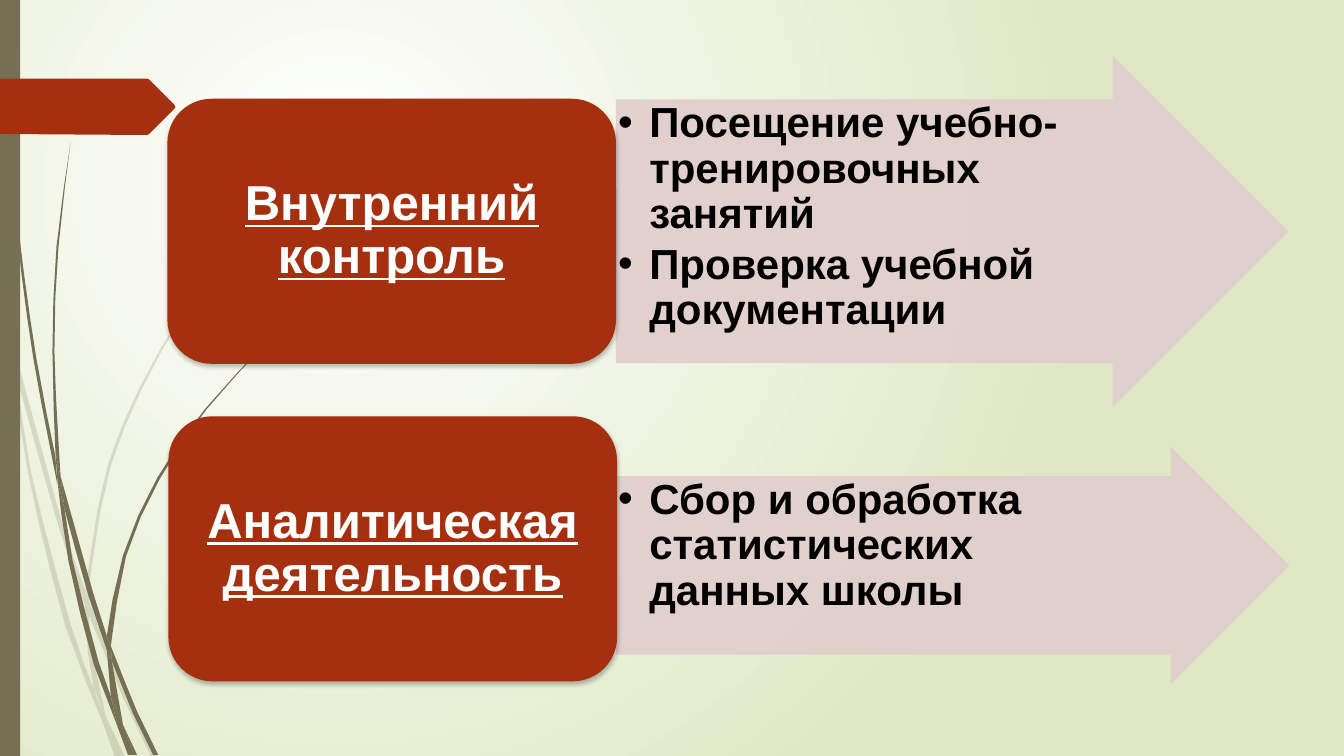
from dataclasses import dataclass
from math import dist

from lxml.etree import SubElement
from pptx import Presentation
from pptx.dml.color import RGBColor
from pptx.enum.shapes import MSO_SHAPE
from pptx.enum.text import MSO_ANCHOR, PP_ALIGN
from pptx.oxml.ns import qn
from pptx.util import Pt

SCALE = 9144
CURVE_STRIDE = 45


@dataclass(frozen=True)
class Theme:
    font: str = "Arial"
    card_size: int = 35
    bullet_size: int = 30
    centre: str = "FFFFFF"
    edge: str = "DFE8C4"
    grass: str = "766F54"
    brick: str = "A53010"
    arrow: str = "E1CDCC"
    light: str = "FFFFFF"
    dark: str = "000000"


THEME = Theme()

PALE_BLADES = [
    ([(11, 350), (0, 282)], [(0, 299), (11, 350)]),
    ([(17, 376), (58, 522), (84, 599)], [(85, 586), (62, 520), (14, 345)]),
    ([(88, 610), (123, 694), (150, 751)], [(155, 751), (127, 692), (88, 596)]),
    ([(119, 751), (124, 751)], [(105, 711)]),
    ([(11, 350), (28, 470), (65, 621), (101, 714)],
     [(93, 683), (70, 619), (31, 469), (17, 376)]),
    ([(84, 599), (87, 646), (93, 683), (105, 711)], [(91, 646), (88, 610)]),
    ([(88, 596), (88, 584), (110, 462), (160, 349), (229, 245), (268, 198), (312, 154)],
     [(312, 153), (268, 197), (228, 244), (158, 348), (107, 461), (85, 584)]),
    ([(101, 714), (114, 751)], [(119, 751)]),
    ([(88, 610), (88, 596)], [(85, 586), (84, 599)]),
    ([(93, 683), (101, 714), (119, 751)], [(105, 711), (96, 692)]),
]

DARK_BLADES = [
    ([(3, 0), (7, 110), (17, 233), (33, 355), (57, 481)],
     [(55, 453), (36, 355), (19, 232), (8, 109), (4, 0)]),
    ([(64, 505), (88, 592), (106, 645)], [(106, 631), (93, 590), (60, 472)]),
    ([(111, 656), (132, 708), (152, 749)], [(157, 749), (136, 706), (110, 641)]),
    ([(57, 477), (68, 557), (93, 659), (117, 722)],
     [(110, 691), (98, 657), (72, 556), (64, 505)]),
    ([(60, 472), (54, 349), (58, 245), (70, 141)],
     [(70, 141), (56, 245), (52, 349), (55, 449)]),
    ([(133, 749), (136, 749)], [(122, 719)]),
    ([(57, 477), (64, 505)], [(60, 472), (55, 449)]),
    ([(111, 633), (125, 552), (158, 476), (205, 406), (261, 344)],
     [(260, 344), (204, 405), (156, 474), (122, 551), (106, 631), (110, 641)]),
    ([(117, 722), (127, 749)], [(131, 749)]),
    ([(106, 645), (110, 691), (122, 719)], [(111, 656)]),
    ([(106, 645), (111, 656)], [(110, 641), (106, 631)]),
    ([(110, 691), (117, 722), (130, 749)], [(133, 749), (122, 719)]),
]

FLAG = [(0, 78), (146, 78), (148, 79), (173, 104), (174, 106),
        (173, 108), (148, 133), (146, 134), (0, 133)]

TOPICS = [
    ("Внутренний контроль", (166, 98, 445, 263), (611, 55, 667, 349),
     ["Посещение учебно-тренировочных занятий", "Проверка учебной документации"]),
    ("Аналитическая деятельность", (167, 413, 445, 263), (611, 443, 668, 236),
     ["Сбор и обработка статистических данных школы"]),
]


def px(length):
    return round(length * SCALE)


def assign(target, values):
    for name, value in values.items():
        setattr(target, name, value)


def paint(shape, color, opacity=100):
    shape.shadow.inherit = False
    shape.fill.solid()
    shape.fill.fore_color.rgb = RGBColor.from_string(color)
    shape.line.fill.background()
    if opacity < 100:
        tint = shape.element.xpath("./p:spPr/a:solidFill/a:srgbClr")[0]
        SubElement(tint, qn("a:alpha"), val=str(opacity * 1000))


def add_background(page):
    fill = page.background.fill
    fill.gradient()
    for position, color in enumerate((THEME.centre, THEME.edge)):
        stop = fill.gradient_stops[position]
        stop.position = position
        stop.color.rgb = RGBColor.from_string(color)
    gradient = page.element.xpath(".//p:bg//a:gradFill")[0]
    for line in gradient.findall(qn("a:lin")):
        gradient.remove(line)
    radial = SubElement(gradient, qn("a:path"), {"path": "circle"})
    SubElement(radial, qn("a:fillToRect"), l="50000", t="50000", r="100000", b="100000")


def smooth_edge(points):
    padded = [points[0], *points, points[-1]]
    curve = [points[0]]
    for before, start, end, after in zip(padded, padded[1:], padded[2:], padded[3:]):
        steps = max(1, round(dist(start, end) / CURVE_STRIDE))
        for step in range(1, steps + 1):
            t = step / steps
            curve.append(tuple(
                (2 * b + (c - a) * t + (2 * a - 5 * b + 4 * c - d) * t ** 2
                 + (3 * b - a - 3 * c + d) * t ** 3) / 2
                for a, b, c, d in zip(before, start, end, after)))
    return curve


def add_outline(page, points, color, opacity=100):
    corners = [(px(x), px(y)) for x, y in points]
    builder = page.shapes.build_freeform(*corners[0], scale=1.0)
    builder.add_line_segments(corners[1:], close=True)
    paint(builder.convert_to_shape(), color, opacity)


def add_preset(page, kind, bounds, color, opacity=100):
    shape = page.shapes.add_shape(kind, *map(px, bounds))
    paint(shape, color, opacity)
    return shape


def write(frame, lines, size, color, frame_format, para_format, underline=False):
    assign(frame, {"word_wrap": True, **frame_format})
    for index, line in enumerate(lines):
        para = frame.add_paragraph() if index else frame.paragraphs[0]
        assign(para, {"line_spacing": 0.9, **para_format})
        span = para.add_run()
        span.text = line
        assign(span.font, {"name": THEME.font, "size": Pt(size),
                           "bold": True, "underline": underline})
        span.font.color.rgb = RGBColor.from_string(color)


def add_arrow(page, bounds, lines):
    arrow = add_preset(page, MSO_SHAPE.RIGHT_ARROW, bounds, THEME.arrow, 90)
    arrow.adjustments[0] = 0.75
    inset = px(2)
    write(arrow.text_frame, lines, THEME.bullet_size, THEME.dark,
          {"vertical_anchor": MSO_ANCHOR.TOP, "margin_left": inset, "margin_top": inset,
           "margin_bottom": inset, "margin_right": px(bounds[3] / 4) + inset},
          {"alignment": PP_ALIGN.LEFT, "space_after": Pt(4)})
    for para in arrow.text_frame.paragraphs:
        properties = para._p.get_or_add_pPr()
        properties.set("marL", str(px(31)))
        properties.set("indent", str(px(-31)))
        SubElement(properties, qn("a:buFont"), typeface=THEME.font)
        SubElement(properties, qn("a:buChar"), char="•")


def add_card(page, bounds, title):
    card = add_preset(page, MSO_SHAPE.ROUNDED_RECTANGLE, bounds, THEME.brick)
    effects = card.element.xpath("./p:spPr/a:effectLst")[0]
    shadow = SubElement(effects, qn("a:outerShdw"), blurRad=str(int(Pt(3))),
                        dist=str(int(Pt(2))), dir="5400000", rotWithShape="0")
    tint = SubElement(shadow, qn("a:srgbClr"), val=THEME.dark)
    SubElement(tint, qn("a:alpha"), val="25000")
    write(card.text_frame, [title], THEME.card_size, THEME.light,
          {"vertical_anchor": MSO_ANCHOR.MIDDLE, "margin_left": px(15), "margin_right": px(15),
           "margin_top": px(7), "margin_bottom": px(7)},
          {"alignment": PP_ALIGN.CENTER}, underline=True)


def main():
    deck = Presentation()
    assign(deck, {"slide_width": px(1333), "slide_height": px(750)})
    page = deck.slides.add_slide(deck.slide_layouts[6])
    add_background(page)
    for blades, opacity in ((PALE_BLADES, 20), (DARK_BLADES, 100)):
        for outward, back in blades:
            add_outline(page, smooth_edge(outward) + smooth_edge(back), THEME.grass, opacity)
    add_preset(page, MSO_SHAPE.RECTANGLE, (0, 0, 20, 750), THEME.grass)
    add_outline(page, FLAG, THEME.brick)
    for title, card_bounds, arrow_bounds, lines in TOPICS:
        add_arrow(page, arrow_bounds, lines)
        add_card(page, card_bounds, title)
    deck.save("out.pptx")


if __name__ == "__main__":
    main()
